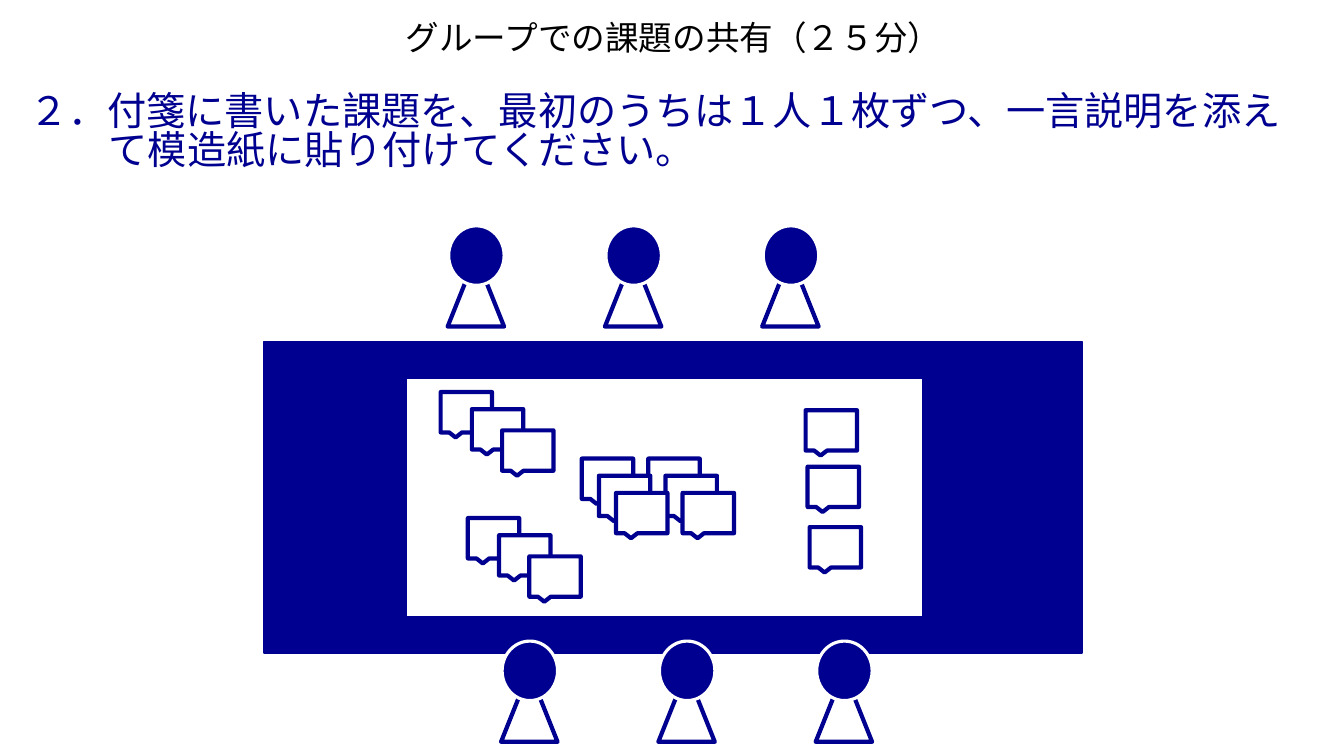
from lxml import etree
from pptx import Presentation
from pptx.dml.color import RGBColor
from pptx.enum.shapes import MSO_SHAPE as Shape
from pptx.enum.text import MSO_ANCHOR as Anchor, PP_ALIGN as Align
from pptx.oxml.ns import qn
from pptx.util import Inches, Pt

COLORS = {"navy": "000090", "white": "FFFFFF", "black": "000000"}
FONT = "Noto Sans CJK JP"

STACK = [(0, 0), (0.31, 0.17), (0.61, 0.38)]
STACK_STARTS = [(0.34, 0.14), (0.61, 1.39)]
PAIR_STARTS = [(1.74, 0.8), (2.4, 0.8)]
PAIR_STEP = 0.17
COLUMN = [(3.96, 0.32), (3.98, 0.88), (4, 1.48)]


def color(name):
    return RGBColor.from_string(COLORS[name])


def style_text(para, size, color_name):
    """Format every run, naming the font for Latin and East Asian text alike."""
    for run in para.runs:
        run.font.size = Pt(size)
        run.font.name = FONT
        run.font.color.rgb = color(color_name)
        east_asian = etree.Element(qn("a:ea"), typeface=FONT)
        run.font._element.find(qn("a:latin")).addnext(east_asian)


def add_figure(page, kind, box, fill, line, weight):
    figure = page.shapes.add_shape(kind, *map(Inches, box))
    figure.shadow.inherit = False
    figure.fill.solid()
    figure.fill.fore_color.rgb = color(fill)
    figure.line.color.rgb = color(line)
    figure.line.width = Pt(weight)


def add_title(page, box, text):
    title = page.shapes.title
    title.left, title.top, title.width, title.height = map(Inches, box)
    frame = title.text_frame
    frame.text = text
    frame.vertical_anchor = Anchor.MIDDLE
    para = frame.paragraphs[0]
    para.alignment = Align.CENTER
    para.line_spacing = 0.9
    style_text(para, 24, "black")


def add_instruction(page, box, text):
    frame = page.shapes.add_textbox(*map(Inches, box)).text_frame
    frame.word_wrap = True
    frame.text = text
    para = frame.paragraphs[0]
    para.line_spacing = 0.83
    indent = Inches(0.79)
    properties = para._p.get_or_add_pPr()
    properties.set("marL", str(indent))
    properties.set("indent", str(-indent))
    style_text(para, 28, "navy")


def add_people(page, left, top, count=3, step=1.56):
    for index in range(count):
        x = left + index * step
        add_figure(page, Shape.ISOSCELES_TRIANGLE, (x, top + 0.3, 0.56, 0.7),
                   "white", "navy", 3)
        add_figure(page, Shape.OVAL, (x + 0.01, top, 0.55, 0.59),
                   "navy", "white", 2.25)


def add_table_top(page, box):
    """Draw the table with the large sheet of paper lying on it."""
    left, top, width, height = box
    paper = (left + 1.41, top + 0.36, 5.12, 2.37)
    add_figure(page, Shape.RECTANGLE, box, "navy", "navy", 1)
    add_figure(page, Shape.RECTANGLE, paper, "white", "navy", 1)
    add_sticky_notes(page, paper)


def add_sticky_notes(page, paper):
    stacks = [(x + dx, y + dy) for x, y in STACK_STARTS for dx, dy in STACK]
    pairs = [(x + level * PAIR_STEP, y + level * PAIR_STEP)
             for level in range(3) for x, y in PAIR_STARTS]
    for x, y in stacks + pairs + COLUMN:
        box = (paper[0] + x, paper[1] + y, 0.51, 0.4)
        add_figure(page, Shape.RECTANGULAR_CALLOUT, box, "white", "navy", 3)


def main():
    deck = Presentation()
    deck.slide_width, deck.slide_height = Inches(13.33), Inches(7.5)
    page = deck.slides.add_slide(deck.slide_layouts[5])
    add_title(page, (0.93, 0.16, 11.5, 0.46), "グループでの課題の共有（２５分）")
    add_instruction(page, (0.19, 0.89, 12.8, 1.04),
                    "２．付箋に書いた課題を、最初のうちは１人１枚ずつ、"
                    "一言説明を添えて模造紙に貼り付けてください。")
    add_table_top(page, (2.62, 3.39, 8.11, 3.09))
    add_people(page, 4.44, 2.24)
    add_people(page, 4.97, 6.36)
    deck.save("out.pptx")


if __name__ == "__main__":
    main()
